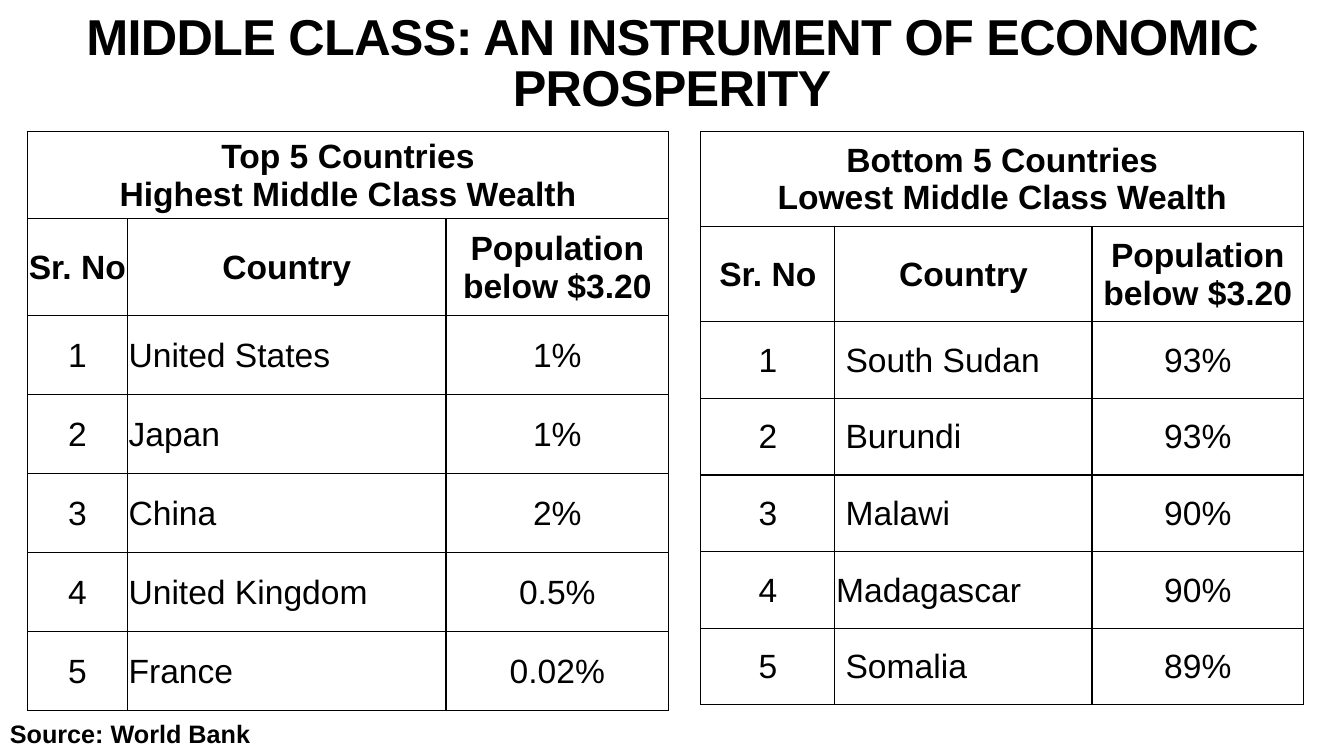
from pptx import Presentation
from pptx.dml.color import RGBColor
from pptx.enum.shapes import MSO_SHAPE
from pptx.enum.text import MSO_ANCHOR as ANCHOR, PP_ALIGN as ALIGN
from pptx.oxml import parse_xml
from pptx.oxml.ns import nsdecls
from pptx.util import Cm, Pt

BLACK, WHITE = "000000", "FFFFFF"
HEADINGS = ["Sr. No", "Country", "Population below $3.20"]


def color(value):
    return RGBColor.from_string(value)


def add_run(p, text, size, bold):
    r = p.add_run()
    r.text = text
    r.font.name = "Arial"
    r.font.size = Pt(size)
    r.font.bold = bold
    r.font.color.rgb = color(BLACK)
    return r


def add_borders(cell):
    for side in ("lnL", "lnR", "lnT", "lnB"):
        cell._tc.get_or_add_tcPr().append(parse_xml(
            f'<a:{side} {nsdecls("a")} w="12700"><a:solidFill>'
            f'<a:srgbClr val="{BLACK}"/></a:solidFill></a:{side}>'))


def fill_cell(cell, lines, bold=False, align=ALIGN.CENTER, left=0.03):
    cell.vertical_anchor = ANCHOR.MIDDLE
    cell.margin_left = Cm(left)
    cell.margin_right = cell.margin_top = Cm(0.03)
    cell.margin_bottom = 0
    tf = cell.text_frame
    for i, line in enumerate(lines):
        p = tf.add_paragraph() if i else tf.paragraphs[0]
        p.alignment = align
        add_run(p, line, 24, bold)


def add_title(s, x, y, w, h):
    tf = s.shapes.add_textbox(Cm(x), Cm(y), Cm(w), Cm(h)).text_frame
    tf.word_wrap = True
    tf.vertical_anchor = ANCHOR.MIDDLE
    p = tf.paragraphs[0]
    p.alignment = ALIGN.CENTER
    p.line_spacing = 0.85
    r = add_run(p, "MIDDLE CLASS: AN INSTRUMENT OF ECONOMIC PROSPERITY", 36, True)
    r.font._element.set("spc", "-50")


def add_ranking(s, x, y, widths, heights, title, countries, indent, flush=()):
    """Draw a ranking table; names in flush are not indented."""
    frame = s.shapes.add_table(len(heights), len(widths), Cm(x), Cm(y),
                               Cm(sum(widths)), Cm(sum(heights)))
    table = frame.table
    table.first_row = table.horz_banding = False
    for col, width in zip(table.columns, widths):
        col.width = Cm(width)
    for row, height in zip(table.rows, heights):
        row.height = Cm(height)
    for cell in table.iter_cells():
        add_borders(cell)
        cell.fill.solid()
        cell.fill.fore_color.rgb = color(WHITE)

    # Title and column headings
    table.cell(0, 0).merge(table.cell(0, len(widths) - 1))
    fill_cell(table.cell(0, 0), title, bold=True)
    for c, heading in enumerate(HEADINGS):
        fill_cell(table.cell(1, c), [heading], bold=True)

    # Ranked countries
    for rank, (country, share) in enumerate(countries, 1):
        left = 0.03 if country in flush else indent
        fill_cell(table.cell(rank + 1, 0), [str(rank)])
        fill_cell(table.cell(rank + 1, 1), [country], align=ALIGN.LEFT, left=left)
        fill_cell(table.cell(rank + 1, 2), [share])


def add_source(s, x, y, w, h):
    sp = s.shapes.add_shape(MSO_SHAPE.RECTANGLE, Cm(x), Cm(y), Cm(w), Cm(h))
    sp.shadow.inherit = False
    sp.fill.solid()
    sp.fill.fore_color.rgb = color(WHITE)
    sp.line.fill.background()
    tf = sp.text_frame
    tf.word_wrap = True
    tf.vertical_anchor = ANCHOR.MIDDLE
    p = tf.paragraphs[0]
    p.alignment = ALIGN.LEFT
    add_run(p, "Source: World Bank", 18, True)


def main():
    prs = Presentation()
    prs.slide_width, prs.slide_height = Cm(33.87), Cm(19.05)
    s = prs.slides.add_slide(prs.slide_layouts[6])

    add_title(s, 0, 0.1, 33.87, 3.12)
    add_ranking(
        s, 0.69, 3.31, [2.52, 8.03, 5.61], [2.2, 2.44] + [1.99] * 5,
        ["Top 5 Countries", "Highest Middle Class Wealth"],
        [("United States", "1%"), ("Japan", "1%"), ("China", "2%"),
         ("United Kingdom", "0.5%"), ("France", "0.02%")],
        indent=0.03)
    add_ranking(
        s, 17.66, 3.31, [3.38, 6.48, 5.33], [2.4, 2.4] + [1.93] * 5,
        ["Bottom 5 Countries", "Lowest Middle Class Wealth"],
        [("South Sudan", "93%"), ("Burundi", "93%"), ("Malawi", "90%"),
         ("Madagascar", "90%"), ("Somalia", "89%")],
        indent=0.27, flush=("Madagascar",))
    add_source(s, 0, 17.98, 33.87, 1.02)

    prs.save("out.pptx")


if __name__ == "__main__":
    main()
